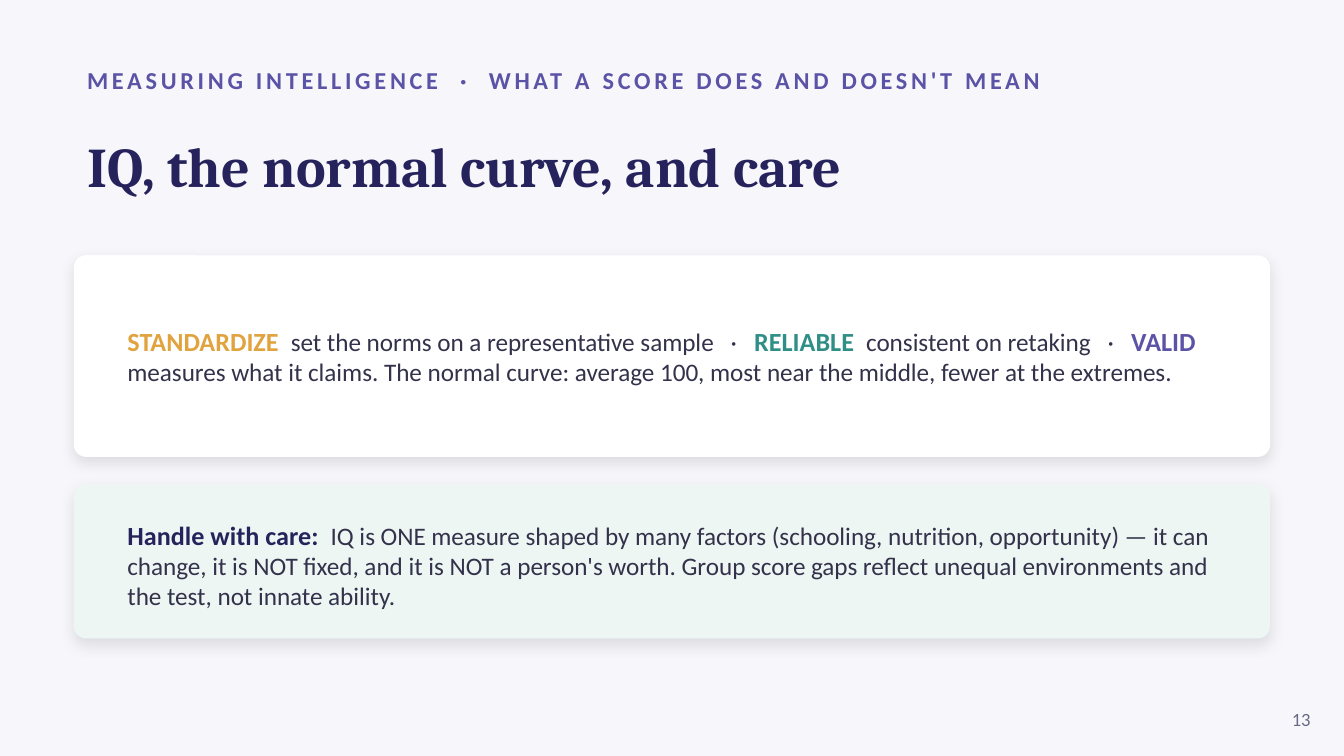
import pptx
import pptx.dml.color
import pptx.enum.shapes
import pptx.enum.text
import pptx.oxml
import pptx.oxml.ns
import pptx.util
from dataclasses import dataclass

Inches = pptx.util.Inches
ALIGN = pptx.enum.text.PP_ALIGN

COLORS = {
    "background": "F7F7FB",
    "violet": "5B53A6",
    "navy": "26235C",
    "body": "33324A",
    "amber": "E0A33E",
    "teal": "2F8F86",
    "muted": "6B6A86",
    "white": "FFFFFF",
    "mint": "EEF6F4",
}


@dataclass
class Span:
    text: str
    size: float
    color: str
    bold: bool = False
    font: str = "Calibri"
    spacing: float = 0  # points between letters


@dataclass
class Box:
    left: float
    top: float
    width: float
    height: float

    def lengths(self) -> list:
        return [Inches(v) for v in (self.left, self.top, self.width, self.height)]


@dataclass
class Card:
    box: Box
    fill: str
    text_box: Box
    spans: list[Span]


def rgb(name: str) -> pptx.dml.color.RGBColor:
    return pptx.dml.color.RGBColor.from_string(COLORS[name])


def keyword(text: str, color: str) -> Span:
    return Span(text, 14, color, bold=True)


def body(text: str) -> Span:
    return Span(text, 13.5, "body")


def add_text(slide, box: Box, spans: list[Span], align=ALIGN.LEFT) -> None:
    frame = slide.shapes.add_textbox(*box.lengths()).text_frame
    frame.word_wrap = True
    frame.vertical_anchor = pptx.enum.text.MSO_ANCHOR.MIDDLE
    paragraph = frame.paragraphs[0]
    paragraph.alignment = align
    for span in spans:
        run = paragraph.add_run()
        run.text = span.text
        run.font.name = span.font
        run.font.size = pptx.util.Pt(span.size)
        run.font.bold = span.bold
        run.font.color.rgb = rgb(span.color)
        if span.spacing:
            run.font._element.set("spc", str(int(span.spacing * 100)))


def add_soft_shadow(shape) -> None:
    shape.shadow.inherit = False
    effects = shape._element.spPr.find(pptx.oxml.ns.qn("a:effectLst"))
    effects.append(pptx.oxml.parse_xml(
        f'<a:outerShdw {pptx.oxml.ns.nsdecls("a")} blurRad="{pptx.util.Pt(7)}" '
        f'dist="{pptx.util.Pt(3)}" dir="5400000" algn="bl" rotWithShape="0">'
        '<a:srgbClr val="000000"><a:alpha val="10000"/></a:srgbClr></a:outerShdw>'
    ))


def add_card(slide, card: Card) -> None:
    panel = slide.shapes.add_shape(
        pptx.enum.shapes.MSO_SHAPE.ROUNDED_RECTANGLE, *card.box.lengths())
    panel.adjustments[0] = 0.09 / card.box.height  # same corner radius on every card
    panel.fill.solid()
    panel.fill.fore_color.rgb = rgb(card.fill)
    panel.line.fill.background()
    add_soft_shadow(panel)
    add_text(slide, card.text_box, card.spans)


CARDS = [
    Card(Box(0.55, 1.9, 8.9, 1.5), "white", Box(0.85, 2.1, 8.3, 1.1), [
        keyword("STANDARDIZE  ", "amber"),
        body("set the norms on a representative sample   ·   "),
        keyword("RELIABLE  ", "teal"),
        body("consistent on retaking   ·   "),
        keyword("VALID  ", "violet"),
        body("measures what it claims. The normal curve: average 100, "
             "most near the middle, fewer at the extremes."),
    ]),
    Card(Box(0.55, 3.6, 8.9, 1.15), "mint", Box(0.85, 3.78, 8.3, 0.85), [
        keyword("Handle with care:  ", "navy"),
        body("IQ is ONE measure shaped by many factors (schooling, nutrition, "
             "opportunity) — it can change, it is NOT fixed, and it is NOT a "
             "person's worth. Group score gaps reflect unequal environments "
             "and the test, not innate ability."),
    ]),
]


def main() -> None:
    deck = pptx.Presentation()
    deck.slide_width = Inches(10)
    deck.slide_height = Inches(10 * 9 / 16)  # 16:9
    slide = deck.slides.add_slide(deck.slide_layouts[6])
    slide.background.fill.solid()
    slide.background.fill.fore_color.rgb = rgb("background")

    # Heading
    add_text(slide, Box(0.55, 0.42, 9, 0.35), [
        Span("MEASURING INTELLIGENCE  ·  WHAT A SCORE DOES AND DOESN'T MEAN",
             13, "violet", bold=True, spacing=2)])
    add_text(slide, Box(0.55, 0.78, 8.9, 0.9), [
        Span("IQ, the normal curve, and care", 30, "navy", bold=True, font="Cambria")])

    # Cards
    for card in CARDS:
        add_card(slide, card)

    # Page number
    add_text(slide, Box(9.35, 5.2, 0.5, 0.3), [Span("13", 10, "muted")], ALIGN.RIGHT)

    deck.save("out.pptx")


if __name__ == "__main__":
    main()
